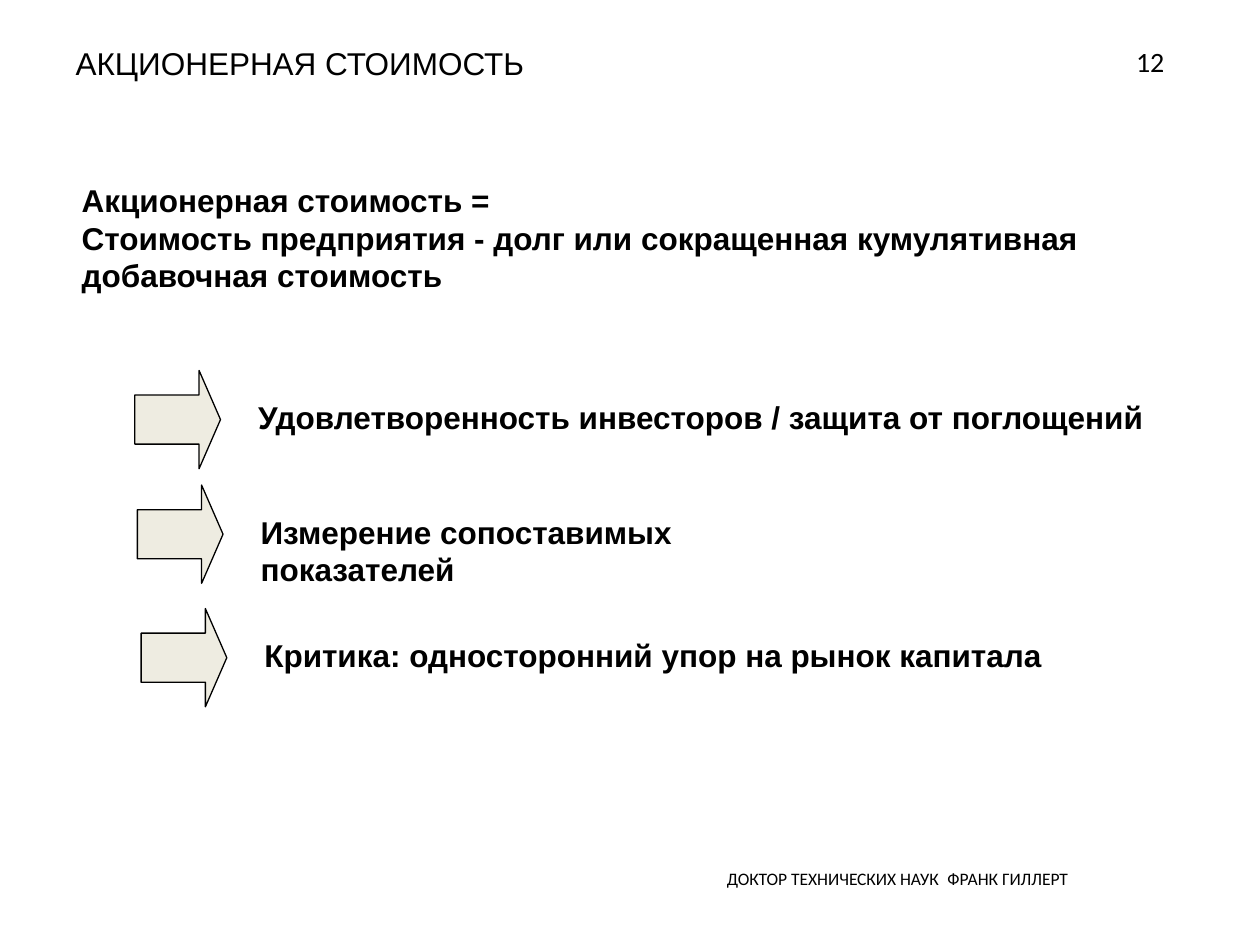
from pptx import Presentation
from pptx import util as u
from pptx.dml.color import RGBColor
from pptx.enum import shapes, text

BLACK = "000000"
BEIGE = "EEECE1"
ARROW_SIZE = (0.68, 0.78)
TEXT_OFFSET = (0.88, 0.17)

# Arrow left, arrow top, text width, text
POINTS = [
    (1.07, 2.94, 7.25, "Удовлетворенность инвесторов / защита от поглощений"),
    (1.09, 3.85, 4.97, "Измерение сопоставимых показателей"),
    (1.12, 4.83, 6.44, "Критика: односторонний упор на рынок капитала"),
]


def color(value):
    return RGBColor.from_string(value)


def inches(*lengths):
    return [u.Inches(length) for length in lengths]


def style(span, size=18, font="Arial", bold=False):
    span.font.size = u.Pt(size)
    span.font.name = font
    span.font.bold = bold
    span.font.color.rgb = color(BLACK)


def fill_frame(frame, lines, align=text.PP_ALIGN.LEFT,
               anchor=text.MSO_ANCHOR.TOP, **font):
    """Write one paragraph per line, all in the same style."""
    frame.word_wrap = True
    frame.auto_size = text.MSO_AUTO_SIZE.NONE
    frame.vertical_anchor = anchor
    frame.text = "\n".join(lines)
    for para in frame.paragraphs:
        para.alignment = align
        for span in para.runs:
            style(span, **font)


def add_text(page, place, lines, **options):
    box = page.shapes.add_textbox(*inches(*place))
    fill_frame(box.text_frame, lines, **options)


def set_title(page, title):
    box = page.shapes.title
    box.left, box.top, box.width, box.height = inches(0.5, 0.3, 9, 0.4)
    fill_frame(box.text_frame, [title])


def add_footer(page):
    box = page.shapes.add_textbox(*inches(5.67, 6.73, 4.08, 0.44))
    box.text_frame.word_wrap = True
    para = box.text_frame.paragraphs[0]
    for words, size, font in [
        ("ДОКТОР ТЕХНИЧЕСКИХ НАУК", 10, "Calibri"),
        (" ", 18, "Arial"),
        ("ФРАНК ГИЛЛЕРТ", 10, "Calibri"),
    ]:
        span = para.add_run()
        span.text = words
        style(span, size, font)


def add_arrow(page, left, top):
    arrow = page.shapes.add_shape(shapes.MSO_SHAPE.RIGHT_ARROW,
                                  *inches(left, top, *ARROW_SIZE))
    arrow.adjustments[0] = 0.5
    arrow.adjustments[1] = 0.25
    arrow.shadow.inherit = False
    arrow.fill.solid()
    arrow.fill.fore_color.rgb = color(BEIGE)
    arrow.line.color.rgb = color(BLACK)
    arrow.line.width = u.Pt(0.75)


def add_point(page, left, top, width, words):
    add_arrow(page, left, top)
    place = (left + TEXT_OFFSET[0], top + TEXT_OFFSET[1], width, 0.4)
    add_text(page, place, [words], bold=True)


def main():
    deck = Presentation()
    deck.slide_width, deck.slide_height = inches(10, 7.5)
    page = deck.slides.add_slide(deck.slide_layouts[5])

    add_footer(page)
    set_title(page, "АКЦИОНЕРНАЯ СТОИМОСТЬ")
    definition = [
        "Акционерная стоимость =\v"
        "Стоимость предприятия - долг или сокращенная кумулятивная",
        "добавочная стоимость",
    ]
    add_text(page, (0.55, 1.38, 8.26, 1.01), definition,
             anchor=text.MSO_ANCHOR.MIDDLE, bold=True)
    for point in POINTS:
        add_point(page, *point)
    add_text(page, (7, 0.23, 2.34, 0.52), ["12"],
             align=text.PP_ALIGN.RIGHT, anchor=text.MSO_ANCHOR.MIDDLE,
             size=16, font="Calibri")

    deck.save("out.pptx")


if __name__ == "__main__":
    main()
